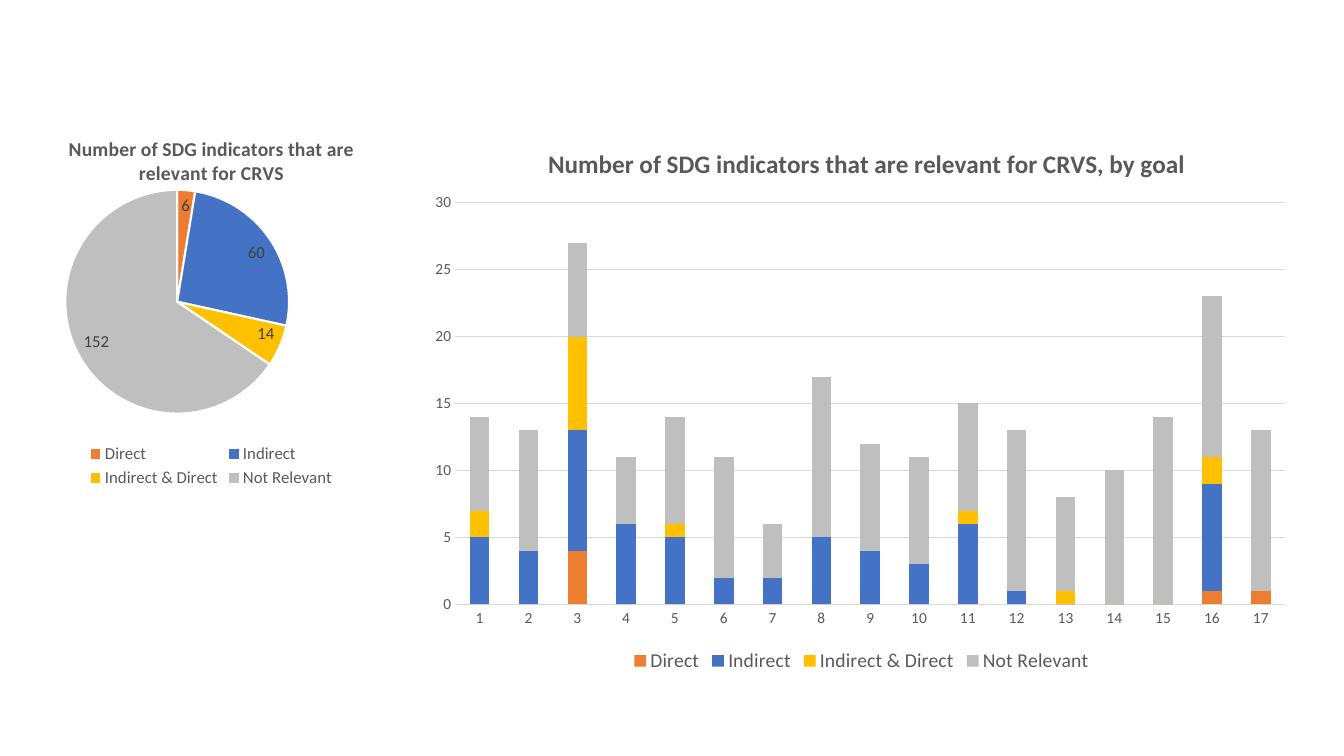
"""Build a slide with a pie and a stacked column chart of SDG indicators."""
from lxml import etree
from pptx import Presentation
from pptx.chart.data import CategoryChartData
from pptx.dml.color import RGBColor
from pptx.enum.chart import (
    XL_CHART_TYPE, XL_LABEL_POSITION, XL_LEGEND_POSITION, XL_TICK_MARK)
from pptx.oxml.ns import qn
from pptx.util import Pt

PX = 914400 / 100.8
COLORS = {
    "Direct": "ED7D31",
    "Indirect": "4472C4",
    "Indirect & Direct": "FFC000",
    "Not Relevant": "BFBFBF",
    "text": "595959",
    "label": "404040",
    "grid": "D9D9D9",
    "edge": "FFFFFF",
}
GOALS = {
    "Direct": [0, 0, 4, 0, 0, 0, 0, 0, 0, 0, 0, 0, 0, 0, 0, 1, 1],
    "Indirect": [5, 4, 9, 6, 5, 2, 2, 5, 4, 3, 6, 1, 0, 0, 0, 8, 0],
    "Indirect & Direct": [2, 0, 7, 0, 1, 0, 0, 0, 0, 0, 1, 0, 1, 0, 0, 2, 0],
    "Not Relevant": [7, 9, 7, 5, 8, 9, 4, 12, 8, 8, 8, 12, 7, 10, 14, 12, 12],
}
TOTALS = [6, 60, 14, 152]


def style(font, size, color="text", bold=False):
    font.name = "Calibri"
    font.size = Pt(size)
    font.bold = bold
    font.color.rgb = RGBColor.from_string(COLORS[color])


def place(parent, **parts):
    layout = parent.find(qn("c:layout"))
    if layout is None:
        layout = etree.Element(qn("c:layout"))
        parent.insert(0, layout)
    manual = etree.SubElement(layout, qn("c:manualLayout"))
    for tag, val in parts.items():
        etree.SubElement(manual, qn("c:" + tag)).set("val", str(val))


deck = Presentation()
deck.slide_width = round(1344 * PX)
deck.slide_height = round(756 * PX)
slide = deck.slides.add_slide(deck.slide_layouts[6])

bar_data = CategoryChartData()
bar_data.categories = [str(goal) for goal in range(1, 18)]
for name, counts in GOALS.items():
    bar_data.add_series(name, counts)

pie_data = CategoryChartData()
pie_data.categories = list(GOALS)
pie_data.add_series("Series 1", TOTALS)

charts = []
for kind, data, box, title, size, key in (
    (XL_CHART_TYPE.COLUMN_STACKED, bar_data, (420, 119, 883, 558),
     "Number of SDG indicators that are relevant for CRVS, by goal", 18, 14),
    (XL_CHART_TYPE.PIE, pie_data, (21, 119, 381, 373),
     "Number of SDG indicators that are relevant for CRVS", 14, 12),
):
    spot = [round(side * PX) for side in box]
    chart = slide.shapes.add_chart(kind, *spot, data).chart
    chart.font.name = "Calibri"
    chart.font.size = Pt(10)
    chart.has_title = True
    frame = chart.chart_title.text_frame
    frame.text = title
    style(frame.paragraphs[0].runs[0].font, size, bold=True)
    chart.has_legend = True
    chart.legend.position = XL_LEGEND_POSITION.BOTTOM
    chart.legend.include_in_layout = False
    style(chart.legend.font, key)
    charts.append(chart)

bars, pie = charts

plot = bars.plots[0]
plot.gap_width = 150
plot.overlap = 100
plot.vary_by_categories = False
for series in plot.series:
    series.format.fill.solid()
    series.format.fill.fore_color.rgb = RGBColor.from_string(COLORS[series.name])

for axis in (bars.category_axis, bars.value_axis):
    axis.major_tick_mark = XL_TICK_MARK.NONE
    axis.minor_tick_mark = XL_TICK_MARK.NONE
    style(axis.tick_labels.font, 11)
bars.value_axis.minimum_scale = 0
bars.value_axis.maximum_scale = 30
bars.value_axis.major_unit = 5
bars.value_axis.has_major_gridlines = True
bars.value_axis.format.line.fill.background()
for line in (bars.category_axis.format.line,
             bars.value_axis.major_gridlines.format.line):
    line.color.rgb = RGBColor.from_string(COLORS["grid"])
    line.width = Pt(0.75)

plot = pie.plots[0]
plot.vary_by_categories = True
for spot, name in enumerate(GOALS):
    form = plot.series[0].points[spot].format
    form.fill.solid()
    form.fill.fore_color.rgb = RGBColor.from_string(COLORS[name])
    form.line.color.rgb = RGBColor.from_string(COLORS["edge"])
    form.line.width = Pt(1.5)
plot.has_data_labels = True
labels = plot.data_labels
labels.show_value = True
labels.show_percentage = False
labels.position = XL_LABEL_POSITION.INSIDE_END
style(labels.font, 12, "label")

for chart, x, y, w, h in ((bars, 0.04, 0.15, 0.94, 0.72),
                          (pie, 0.06, 0.19, 0.7, 0.6)):
    area = chart.plots[0]._element.getparent()
    place(area, layoutTarget="inner", xMode="edge", yMode="edge",
          x=x, y=y, w=w, h=h)
place(bars.chart_title._element, xMode="edge", yMode="edge", x=0.14, y=0.04)

deck.save("out.pptx")
